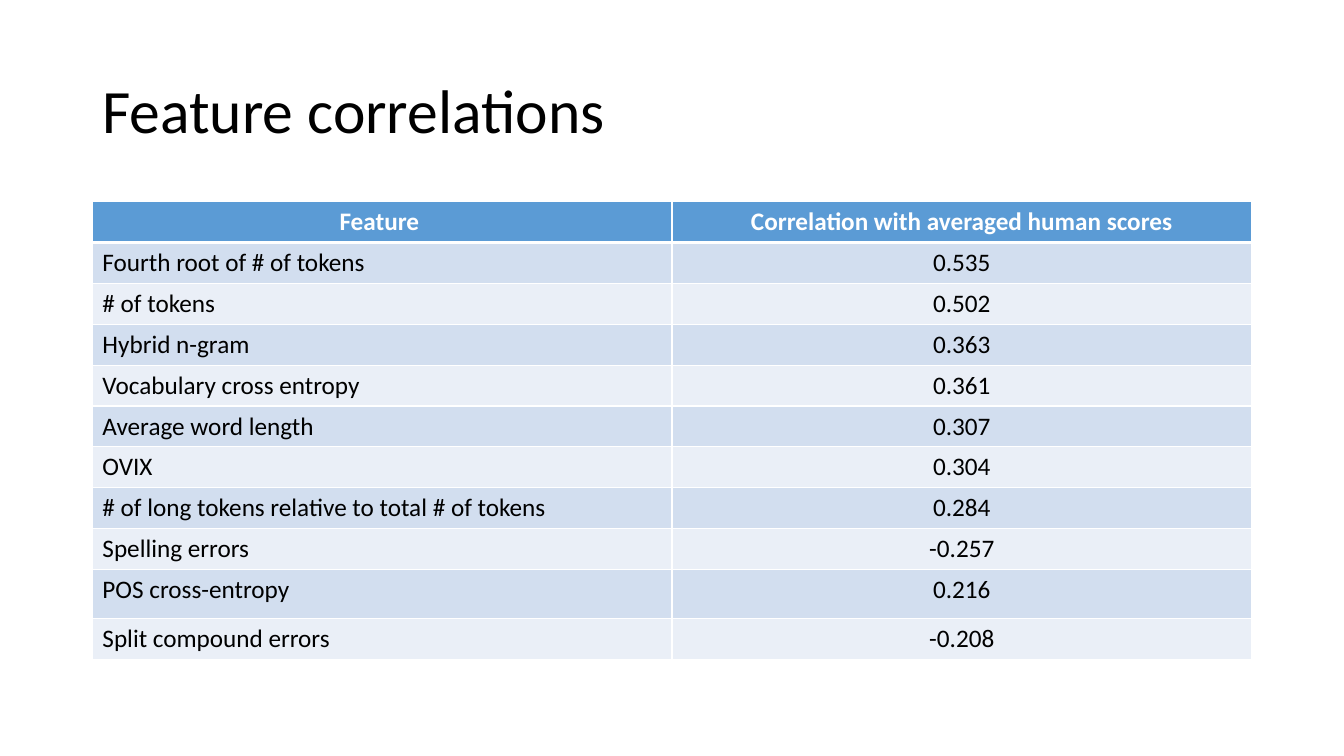
from lxml.etree import SubElement
from pptx import Presentation
from pptx.dml.color import RGBColor
from pptx.enum.text import MSO_ANCHOR, PP_ALIGN
from pptx.oxml.ns import qn
from pptx.util import Pt

COLORS = {
    "text": "000000",
    "white": "FFFFFF",
    "header": "5B9BD5",
    "odd": "D2DEEF",
    "even": "EAEFF7",
}
HEADER = ("Feature ", "Correlation with averaged human scores")
CORRELATIONS = [
    ("Fourth root of # of tokens", "0.535"),
    ("# of tokens", "0.502"),
    ("Hybrid n-gram", "0.363"),
    ("Vocabulary cross entropy", "0.361"),
    ("Average word length", "0.307"),
    ("OVIX", "0.304"),
    ("# of long tokens relative to total # of tokens", "0.284"),
    ("Spelling errors", "-0.257"),
    ("POS cross-entropy", "0.216"),
    ("Split compound errors", "-0.208"),
]
ROW_HEIGHT = 29.2
TALL_ROWS = {"POS cross-entropy": 35}


class SlideBuilder:
    font = "Calibri"
    title_size = 44
    table_size = 18

    def __init__(self, slide):
        self.s = slide

    def format_paragraph(self, p, size, color, bold=False, align=PP_ALIGN.LEFT):
        p.alignment = align
        for r in p.runs:
            r.font.name = self.font
            r.font.size = Pt(size)
            r.font.bold = bold
            r.font.color.rgb = RGBColor.from_string(COLORS[color])

    def title(self, text, x, y, w, h):
        tf = self.s.shapes.add_textbox(Pt(x), Pt(y), Pt(w), Pt(h)).text_frame
        tf.word_wrap = True
        tf.vertical_anchor = MSO_ANCHOR.MIDDLE
        tf.text = text
        p = tf.paragraphs[0]
        p.line_spacing = 0.9
        self.format_paragraph(p, self.title_size, "text")

    def borders(self, cell, top, bottom):
        """Draw white cell borders; must run before the cell is filled."""
        tc_pr = cell._tc.get_or_add_tcPr()
        for side, width in (("L", 1), ("R", 1), ("T", top), ("B", bottom)):
            ln = SubElement(tc_pr, qn(f"a:ln{side}"), w=str(Pt(width)))
            fill = SubElement(ln, qn("a:solidFill"))
            SubElement(fill, qn("a:srgbClr"), val=COLORS["white"])

    def table(self, rows, heights, x, y, w):
        columns = len(rows[0])
        table = self.s.shapes.add_table(
            len(rows), columns, Pt(x), Pt(y), Pt(w), Pt(sum(heights))
        ).table
        for column in table.columns:
            column.width = Pt(w / columns)
        for i, (values, height) in enumerate(zip(rows, heights)):
            table.rows[i].height = Pt(height)
            is_header = i == 0
            fill = "header" if is_header else "odd" if i % 2 else "even"
            for j, value in enumerate(values):
                cell = table.cell(i, j)
                self.borders(cell, 3 if i == 1 else 1, 3 if is_header else 1)
                cell.fill.solid()
                cell.fill.fore_color.rgb = RGBColor.from_string(COLORS[fill])
                cell.text_frame.text = value
                centered = is_header or j > 0
                self.format_paragraph(
                    cell.text_frame.paragraphs[0],
                    self.table_size,
                    "white" if is_header else "text",
                    bold=is_header,
                    align=PP_ALIGN.CENTER if centered else PP_ALIGN.LEFT,
                )


def main():
    prs = Presentation()
    prs.slide_width, prs.slide_height = Pt(960), Pt(540)
    builder = SlideBuilder(prs.slides.add_slide(prs.slide_layouts[6]))
    builder.title("Feature correlations", 66, 28.75, 828, 104.4)
    rows = [HEADER, *CORRELATIONS]
    heights = [TALL_ROWS.get(feature, ROW_HEIGHT) for feature, _ in rows]
    builder.table(rows, heights, 66, 144, 828)
    prs.save("out.pptx")


if __name__ == "__main__":
    main()
